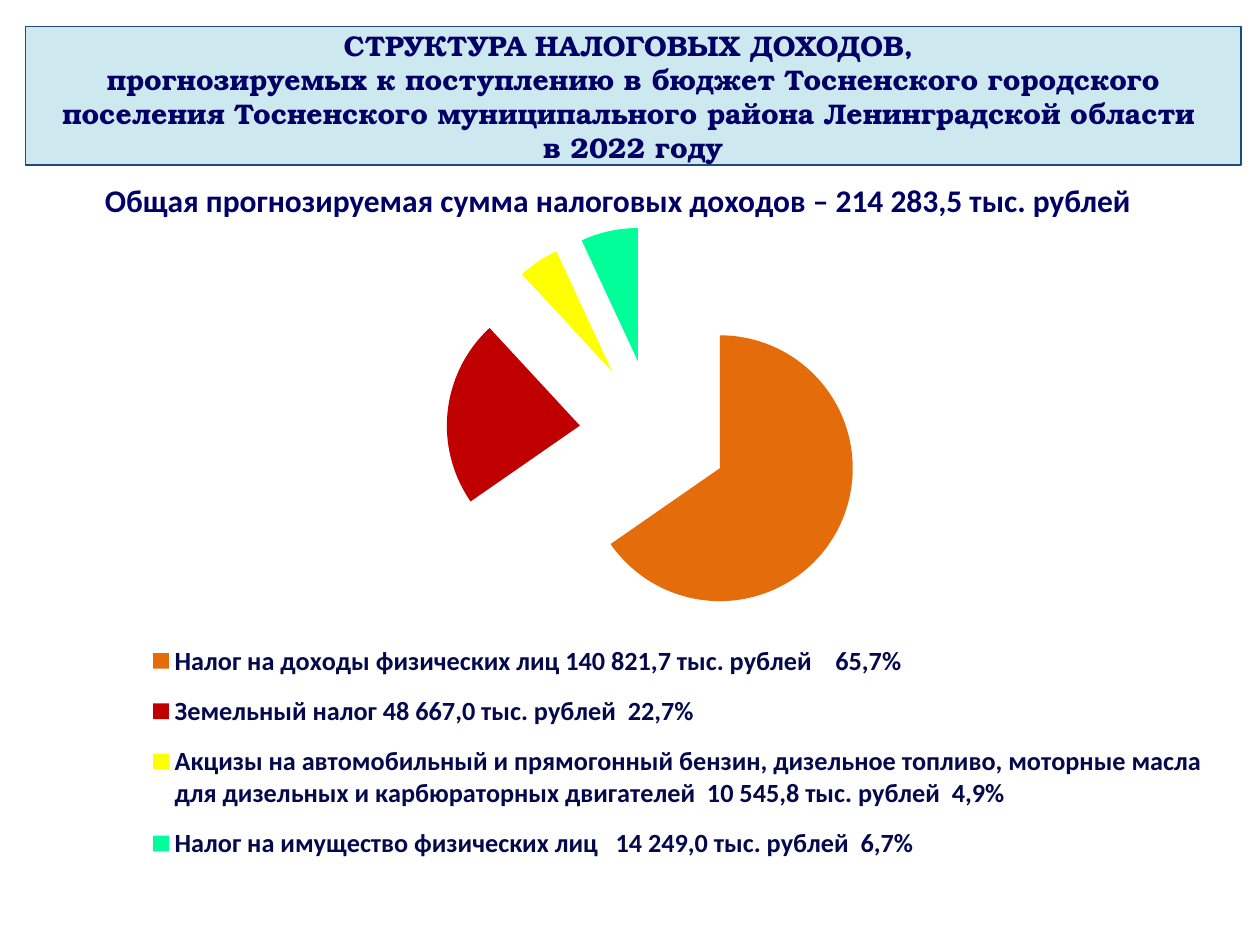
import pptx
import pptx.chart.data
import pptx.dml.color
import pptx.enum.chart
import pptx.enum.shapes
import pptx.enum.text
import pptx.oxml
import pptx.oxml.ns
import pptx.util
from pptx.util import Inches

RGBColor = pptx.dml.color.RGBColor
NAVY = RGBColor(0x00, 0x00, 0x66)
LEGEND_NAVY = RGBColor(0x04, 0x09, 0x4C)
BANNER_BLUE = RGBColor(0xB7, 0xDE, 0xE8)
BORDER_BLUE = RGBColor(0x1F, 0x49, 0x7D)
ORANGE = RGBColor(0xE4, 0x6C, 0x0A)
RED = RGBColor(0xC0, 0x00, 0x00)
YELLOW = RGBColor(0xFF, 0xFF, 0x00)
GREEN = RGBColor(0x00, 0xFF, 0x99)

TITLE = (
    "СТРУКТУРА НАЛОГОВЫХ ДОХОДОВ, \v"
    "прогнозируемых к поступлению в бюджет Тосненского городского "
    "поселения Тосненского муниципального района Ленинградской области \v"
    "в 2022 году"
)
TOTAL = "Общая прогнозируемая сумма налоговых доходов – 214 283,5 тыс. рублей"
TAXES = [
    ("Налог на доходы физических лиц 140 821,7 тыс. рублей    65,7%", 66, ORANGE),
    ("Земельный налог 48 667,0 тыс. рублей  22,7%", 23, RED),
    ("Акцизы на автомобильный и прямогонный бензин, дизельное топливо, "
     "моторные масла для дизельных и карбюраторных двигателей  "
     "10 545,8 тыс. рублей  4,9%", 5, YELLOW),
    ("Налог на имущество физических лиц   14 249,0 тыс. рублей  6,7%", 7, GREEN),
]


def style_font(font, name, size, color):
    font.name = name
    font.size = pptx.util.Pt(size)
    font.bold = True
    font.color.rgb = color


def write_centered(shape, text, font_name, size):
    text_frame = shape.text_frame
    text_frame.word_wrap = True
    text_frame.text = text
    paragraph = text_frame.paragraphs[0]
    paragraph.alignment = pptx.enum.text.PP_ALIGN.CENTER
    for run in paragraph.runs:
        style_font(run.font, font_name, size, NAVY)


def set_opacity(shape, percent):
    color = shape.fill._xPr.find(".//" + pptx.oxml.ns.qn("a:srgbClr"))
    alpha = color.makeelement(pptx.oxml.ns.qn("a:alpha"), {"val": str(percent * 1000)})
    color.append(alpha)


def add_banner(slide):
    banner = slide.shapes.add_shape(
        pptx.enum.shapes.MSO_SHAPE.RECTANGLE,
        Inches(0.2), Inches(0.21), Inches(9.65), Inches(1.1))
    banner.shadow.inherit = False
    banner.fill.solid()
    banner.fill.fore_color.rgb = BANNER_BLUE
    set_opacity(banner, 68)
    banner.line.color.rgb = BORDER_BLUE
    banner.line.width = pptx.util.Pt(0.75)
    banner.text_frame.vertical_anchor = pptx.enum.text.MSO_ANCHOR.MIDDLE
    write_centered(banner, TITLE, "TeX Gyre Bonum", 16.2)


def add_total(slide):
    total = slide.shapes.add_textbox(
        Inches(0.04), Inches(1.39), Inches(9.73), Inches(0.4))
    write_centered(total, TOTAL, "Calibri", 18)


def manual_layout(x, y, width, height, inner=False):
    """Return a c:layout element in fractions of the chart area."""
    target = '<c:layoutTarget val="inner"/>' if inner else ""
    return pptx.oxml.parse_xml(
        f'<c:layout {pptx.oxml.ns.nsdecls("c")}><c:manualLayout>{target}'
        '<c:xMode val="edge"/><c:yMode val="edge"/>'
        f'<c:x val="{x}"/><c:y val="{y}"/><c:w val="{width}"/><c:h val="{height}"/>'
        '</c:manualLayout></c:layout>')


def replace_layout(parent, layout, following):
    """Put the layout in front of the named child of parent."""
    for old in parent.findall(pptx.oxml.ns.qn("c:layout")):
        parent.remove(old)
    parent.find(pptx.oxml.ns.qn(following)).addprevious(layout)


def explode(series, percent):
    element = series._element
    explosion = element.makeelement(
        pptx.oxml.ns.qn("c:explosion"), {"val": str(percent)})
    element.find(pptx.oxml.ns.qn("c:dPt")).addprevious(explosion)


def add_tax_pie(slide):
    data = pptx.chart.data.CategoryChartData()
    data.categories = [label for label, _, _ in TAXES]
    data.add_series("Series 1", [share for _, share, _ in TAXES])
    chart = slide.shapes.add_chart(
        pptx.enum.chart.XL_CHART_TYPE.PIE,
        Inches(0.35), Inches(1.62), Inches(9.49), Inches(5.88), data).chart
    chart.has_title = False
    chart.font.name = "Calibri"
    chart.font.size = pptx.util.Pt(18)

    plot = chart.plots[0]
    plot.vary_by_categories = True
    series = plot.series[0]
    for index, (_, _, color) in enumerate(TAXES):
        fill = series.points[index].format.fill
        fill.solid()
        fill.fore_color.rgb = color
    explode(series, 56)

    chart.has_legend = True
    legend = chart.legend
    legend.position = pptx.enum.chart.XL_LEGEND_POSITION.BOTTOM
    legend.include_in_layout = False
    style_font(legend.font, "Calibri", 15, LEGEND_NAVY)
    replace_layout(legend._element, manual_layout(0.08, 0.57, 0.9, 0.34), "c:overlay")
    plot_area = chart._chartSpace.chart.plotArea
    replace_layout(
        plot_area, manual_layout(0.09, 0.03, 0.84, 0.56, inner=True), "c:pieChart")


def main():
    presentation = pptx.Presentation()
    presentation.slide_width = Inches(10)
    presentation.slide_height = Inches(7.5)
    slide = presentation.slides.add_slide(presentation.slide_layouts[6])
    add_banner(slide)
    add_total(slide)
    add_tax_pie(slide)
    presentation.save("out.pptx")


if __name__ == "__main__":
    main()
